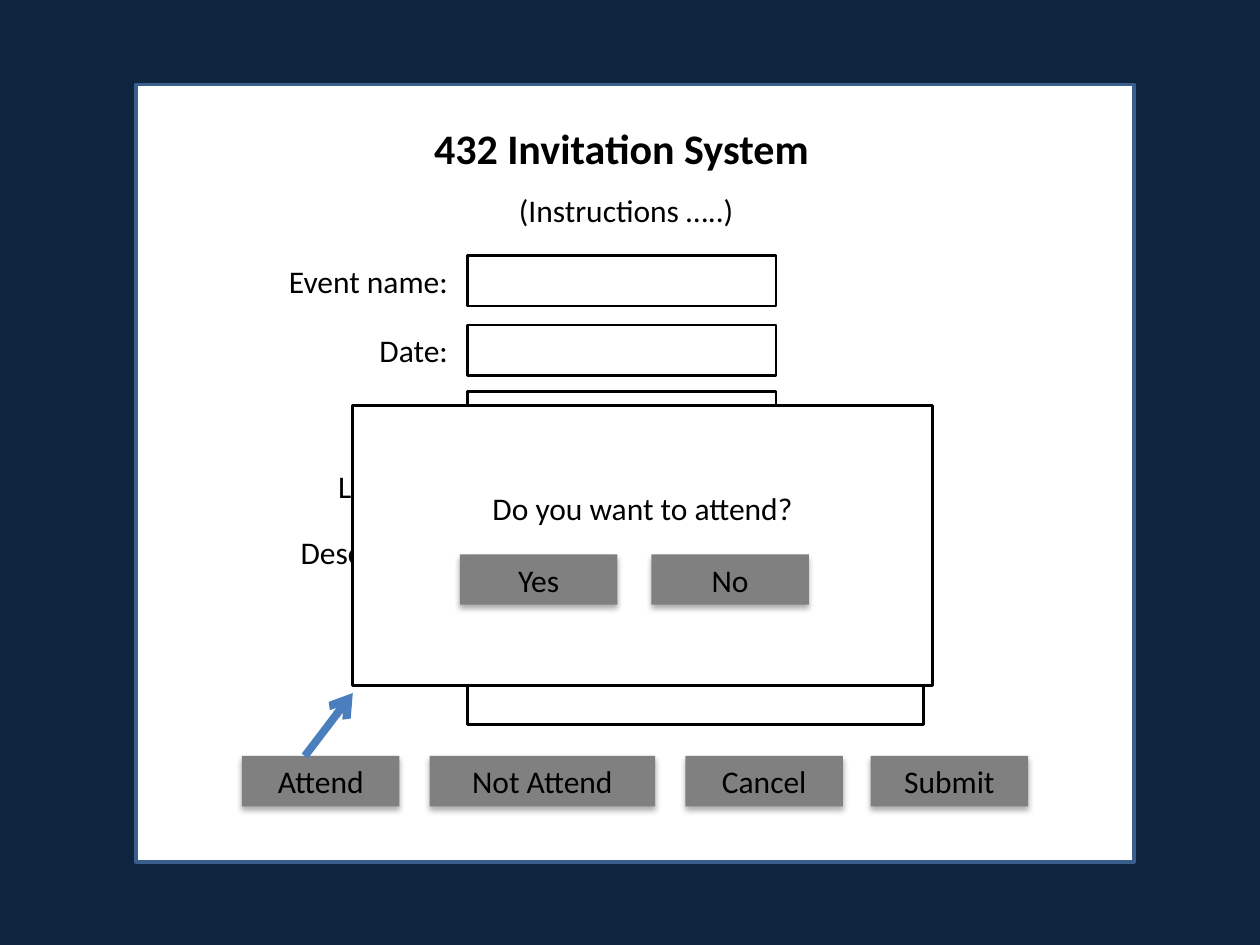
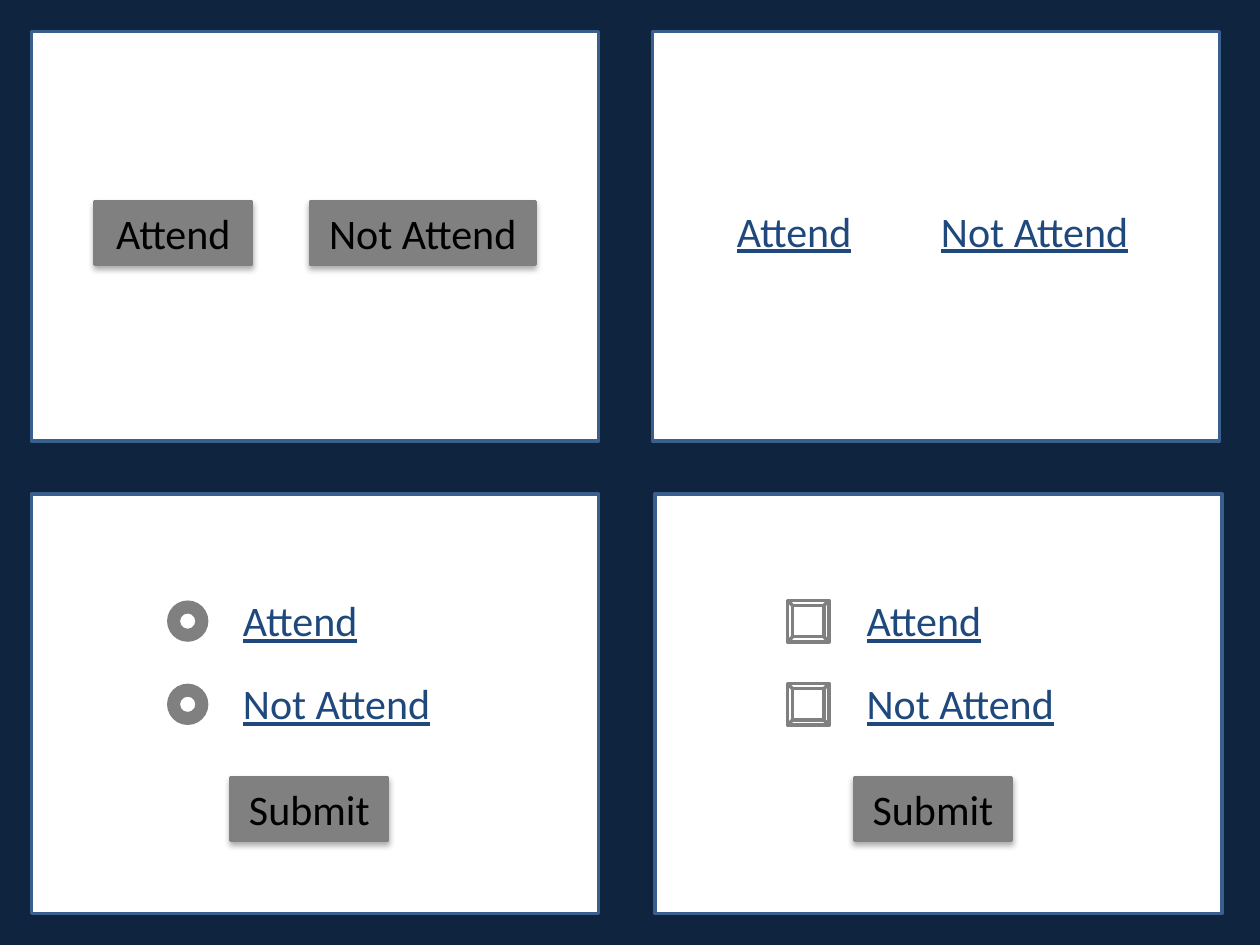
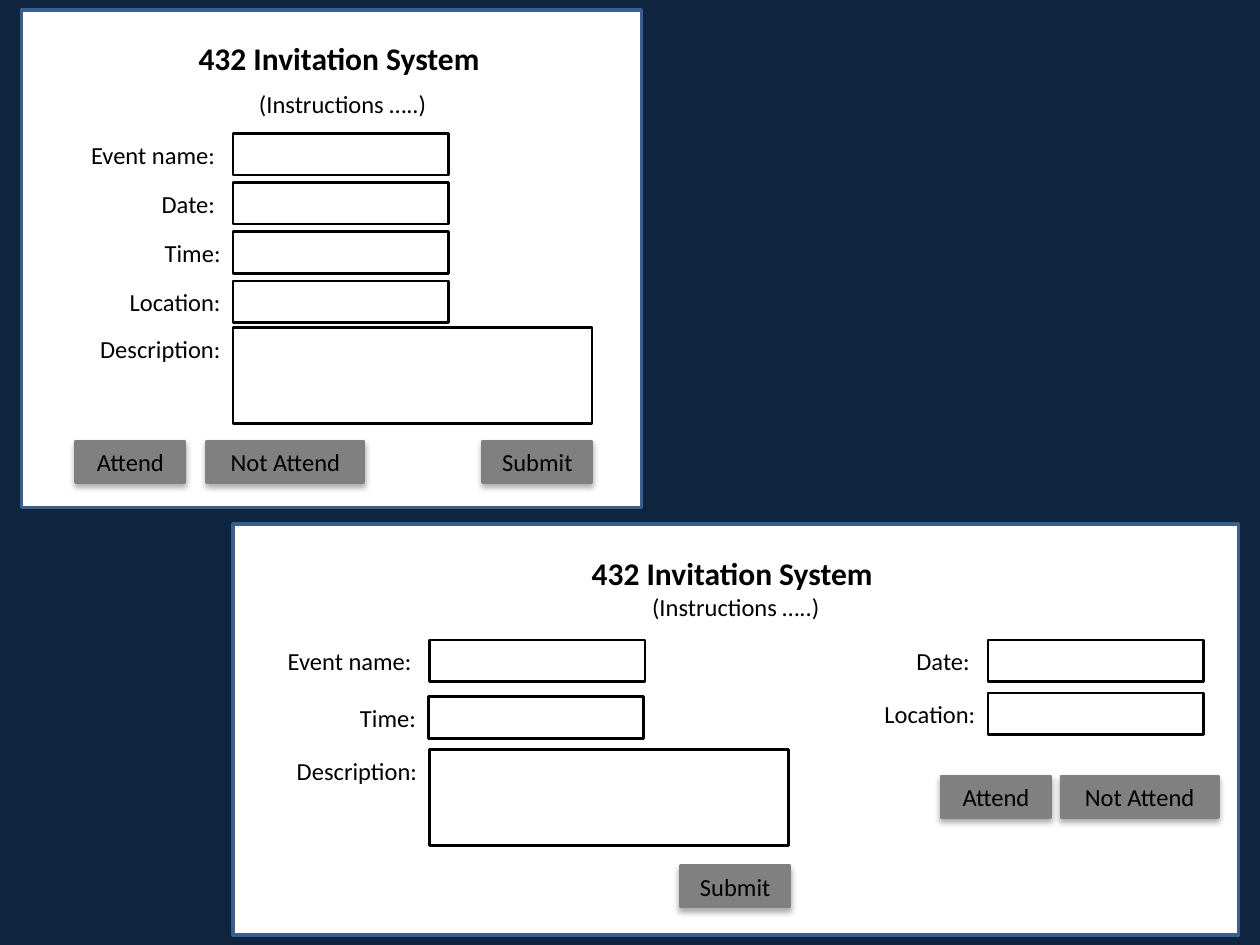
from lxml import etree
from pptx import Presentation
from pptx.dml.color import RGBColor
from pptx.enum.shapes import MSO_CONNECTOR, MSO_SHAPE
from pptx.enum.text import MSO_ANCHOR, MSO_AUTO_SIZE, PP_ALIGN
from pptx.oxml import parse_xml
from pptx.oxml.ns import nsdecls, qn
from pptx.util import Inches, Pt

NAVY = RGBColor(0x0F, 0x24, 0x3E)
WHITE = RGBColor(0xFF, 0xFF, 0xFF)
BLACK = RGBColor(0x00, 0x00, 0x00)
GRAY = RGBColor(0x80, 0x80, 0x80)
PANEL_EDGE = RGBColor(0x3A, 0x5F, 0x8C)
LINK_BLUE = RGBColor(0x1F, 0x49, 0x7D)
ARROW_BLUE = RGBColor(0x4B, 0x7E, 0xBC)

HEADING = "432 Invitation System "
INSTRUCTIONS = "(Instructions …..)"
EVENT, DATE, TIME = "Event name: ", "Date: ", "Time:"
LOCATION, DESCRIPTION = "Location:", "Description:"
ATTEND, NOT_ATTEND, SUBMIT = "Attend", "Not Attend", "Submit"

# Inches that each text takes at 100 points
TEXT_WIDTHS = {
    HEADING: 12.83, INSTRUCTIONS: 9.56, EVENT: 7.44, DATE: 3.37, TIME: 3.22,
    LOCATION: 5.21, DESCRIPTION: 6.9, ATTEND: 3.88, NOT_ATTEND: 6.29,
}
SHADOW = (
    f'<a:effectLst {nsdecls("a")}><a:outerShdw blurRad="{Pt(3.5)}" dist="{Pt(2.2)}" '
    'dir="5400000" rotWithShape="0"><a:srgbClr val="000000"><a:alpha val="32000"/>'
    '</a:srgbClr></a:outerShdw></a:effectLst>'
)


def line_height(size):
    """Height in inches of a box that holds one line of text."""
    return round(size / 60 + 0.1, 2)


def box_width(text, size):
    return TEXT_WIDTHS[text] * size / 100 + 0.2


def write(shape, text, size, align, **font_format):
    paragraph = shape.text_frame.paragraphs[0]
    paragraph.alignment = align
    run = paragraph.add_run()
    run.text = text
    color = font_format.pop("color", BLACK)
    for name, value in {"name": "Calibri", "size": Pt(size), **font_format}.items():
        setattr(run.font, name, value)
    run.font.color.rgb = color


def add_text(shapes, text, left, top, size, align=PP_ALIGN.LEFT, **font_format):
    box = shapes.add_textbox(Inches(left), Inches(top), Inches(box_width(text, size)),
                             Inches(line_height(size)))
    box.text_frame.word_wrap = False
    box.text_frame.auto_size = MSO_AUTO_SIZE.SHAPE_TO_FIT_TEXT
    write(box, text, size, align, **font_format)


def add_box(shapes, left, top, width, height, fill=None, line=None, line_width=1.5,
            kind=MSO_SHAPE.RECTANGLE):
    shape = shapes.add_shape(kind, Inches(left), Inches(top), Inches(width), Inches(height))
    shape.shadow.inherit = False
    if fill is None:
        shape.fill.background()
    else:
        shape.fill.solid()
        shape.fill.fore_color.rgb = fill
    if line is None:
        shape.line.fill.background()
    else:
        shape.line.color.rgb = line
        shape.line.width = Pt(line_width)
    return shape


def add_panel(shapes, left, top, width, height):
    add_box(shapes, left, top, width, height, WHITE, PANEL_EDGE, 2)


def add_button(shapes, text, left, top, width, size, line=GRAY):
    button = add_box(shapes, left, top, width, line_height(size), GRAY, line)
    properties = button._element.spPr
    properties.replace(properties.find(qn("a:effectLst")), parse_xml(SHADOW))
    button.text_frame.vertical_anchor = MSO_ANCHOR.MIDDLE
    write(button, text, size, PP_ALIGN.CENTER)


def add_header(shapes, center, heading_top, heading_size, instructions_top, size):
    """Heading and instructions, both centred on one x."""
    for text, top, points, bold in ((HEADING, heading_top, heading_size, True),
                                    (INSTRUCTIONS, instructions_top, size, False)):
        add_text(shapes, text, center - box_width(text, points) / 2, top, points,
                 PP_ALIGN.CENTER, bold=bold)


def add_label(shapes, text, right, top, size):
    add_text(shapes, text, right - box_width(text, size), top, size, PP_ALIGN.RIGHT)


def add_field(shapes, label, left, top, width, size, height=None):
    """Entry box with its label ending at the left edge."""
    add_label(shapes, label, left, top, size)
    add_box(shapes, left, top, width, height or line_height(size), line=BLACK)


def add_link(shapes, text, left, top):
    add_text(shapes, text, left, top, 24, color=LINK_BLUE, underline=True)


def add_arrow(shapes, start, end):
    arrow = shapes.add_connector(MSO_CONNECTOR.STRAIGHT,
                                 *(Inches(value) for value in (*start, *end)))
    arrow.line.color.rgb = ARROW_BLUE
    arrow.line.width = Pt(4.5)
    etree.SubElement(arrow.line._get_or_add_ln(), qn("a:tailEnd"), type="arrow")
    etree.SubElement(arrow._element.spPr, qn("a:effectLst"))


def add_dialog(shapes):
    dialog = add_box(shapes, 2.8, 3.22, 4.6, 2.22, WHITE, BLACK)
    dialog.text_frame.vertical_anchor = MSO_ANCHOR.TOP
    dialog.text_frame.margin_top = Inches(0.66)
    write(dialog, "Do you want to attend?", 18, PP_ALIGN.CENTER)
    for text, left in (("Yes", 3.65), ("No", 5.17)):
        add_button(shapes, text, left, 4.4, 1.25, 18, line=None)


def add_choices(shapes, panel_left, marker, marker_size, marker_offset, fill):
    """Panel with a marker beside each answer and a submit button."""
    add_panel(shapes, panel_left, 3.92, 4.5, 3.33)
    for text, top in ((ATTEND, 4.67), (NOT_ATTEND, 5.33)):
        add_link(shapes, text, panel_left + 1.58, top)
        marker_top = top + (line_height(24) - marker_size) / 2 + 0.01
        add_box(shapes, panel_left + marker_offset, marker_top, marker_size, marker_size,
                fill, GRAY, 2, marker)
    add_button(shapes, SUBMIT, panel_left + 1.58, 6.17, 1.25, 24)


def build_confirmation(shapes):
    add_panel(shapes, 1.08, 0.67, 7.92, 6.17)
    add_header(shapes, 4.97, 0.92, 24, 1.47, 18)
    for label, top in ((EVENT, 2.03), (DATE, 2.58), (TIME, 3.11)):
        add_field(shapes, label, 3.71, top, 2.45, 18)
    add_label(shapes, LOCATION, 3.71, 3.66, 18)
    add_field(shapes, DESCRIPTION, 3.71, 4.18, 3.62, 18, 1.57)
    for text, left, width in ((ATTEND, 1.92, 1.25), (NOT_ATTEND, 3.41, 1.79),
                              ("Cancel", 5.44, 1.25), (SUBMIT, 6.91, 1.25)):
        add_button(shapes, text, left, 6, width, 18, line=None)
    add_dialog(shapes.add_group_shape().shapes)
    add_arrow(shapes, (2.42, 6), (2.8, 5.5))


def build_answer_controls(shapes):
    for left in (0.25, 5.18):
        add_panel(shapes, left, 0.25, 4.5, 3.25)
    add_button(shapes, ATTEND, 0.75, 1.6, 1.25, 24)
    add_button(shapes, NOT_ATTEND, 2.46, 1.6, 1.79, 24)
    add_link(shapes, ATTEND, 5.75, 1.58)
    add_link(shapes, NOT_ATTEND, 7.37, 1.58)
    add_choices(shapes, 0.25, MSO_SHAPE.DONUT, 0.3, 1.09, GRAY)
    add_choices(shapes, 5.2, MSO_SHAPE.BEVEL, 0.33, 1.05, None)


def build_form(shapes, panel, header, fields, description, buttons):
    add_panel(shapes, *panel)
    add_header(shapes, *header)
    for label, left, top in fields:
        add_field(shapes, label, left, top, 1.71, 14)
    add_field(shapes, DESCRIPTION, *description, 2.85, 14, 0.76)
    for text, left, top in buttons:
        add_button(shapes, text, left, top, 1.25 if text == NOT_ATTEND else 0.87, 14)


def build_form_layouts(shapes):
    labels = (EVENT, DATE, TIME, LOCATION)
    build_form(
        shapes.add_group_shape().shapes,
        panel=(0.17, 0.08, 4.92, 3.95),
        header=(2.72, 0.26, 18, 0.66, 14),
        fields=[(label, 1.85, 1.06 + 0.39 * row) for row, label in enumerate(labels)],
        description=(1.85, 2.6),
        buttons=((ATTEND, 0.6, 3.5), (NOT_ATTEND, 1.64, 3.5), (SUBMIT, 3.83, 3.5)),
    )
    build_form(
        shapes.add_group_shape().shapes,
        panel=(1.85, 4.16, 7.98, 3.26),
        header=(5.84, 4.35, 18, 4.65, 14),
        fields=((EVENT, 3.41, 5.08), (DATE, 7.84, 5.08),
                (TIME, 3.4, 5.53), (LOCATION, 7.84, 5.5)),
        description=(3.41, 5.95),
        buttons=((ATTEND, 7.47, 6.16), (NOT_ATTEND, 8.42, 6.16), (SUBMIT, 5.4, 6.87)),
    )


def main():
    presentation = Presentation()
    presentation.slide_width = Inches(10)
    presentation.slide_height = Inches(7.5)
    for build in (build_confirmation, build_answer_controls, build_form_layouts):
        slide = presentation.slides.add_slide(presentation.slide_layouts[6])
        slide.background.fill.solid()
        slide.background.fill.fore_color.rgb = NAVY
        build(slide.shapes)
    presentation.save("out.pptx")


if __name__ == "__main__":
    main()
